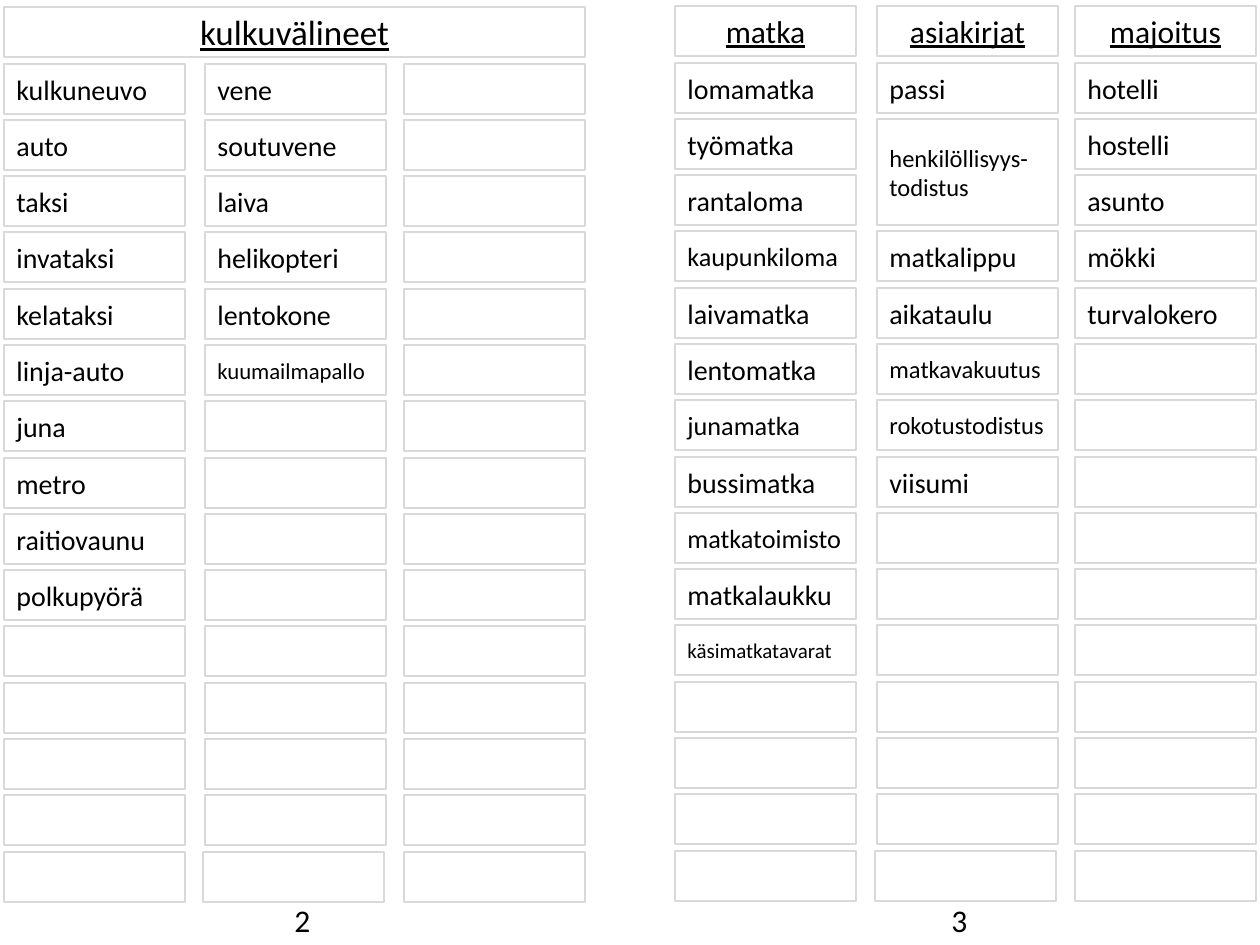
from pptx import Presentation
from pptx.dml.color import RGBColor
from pptx.enum.shapes import MSO_SHAPE
from pptx.enum.text import MSO_ANCHOR, MSO_AUTO_SIZE, PP_ALIGN
from pptx.util import Emu, Pt

RECTANGLE = MSO_SHAPE.RECTANGLE
MIDDLE = MSO_ANCHOR.MIDDLE
LEFT, CENTER = PP_ALIGN.LEFT, PP_ALIGN.CENTER
NO_AUTOFIT, GROW = MSO_AUTO_SIZE.NONE, MSO_AUTO_SIZE.SHAPE_TO_FIT_TEXT

PX = 914400 // 126
COLORS = {"border": "D9D9D9", "text": "000000"}
CELL_WIDTH, CELL_HEIGHT = 181, 50
ROWS, LAST_ROW_OFFSET = 15, 788
TITLE_TEXT = "kulkuvälineet"
TALL_WORD = "henkilöllisyys-todistus"

# Each column: left, top of first row, heading, words (None = covered by the cell above)
COLUMNS = [
    (4, 64, None, ["kulkuneuvo", "auto", "taksi", "invataksi", "kelataksi",
                   "linja-auto", "juna", "metro", "raitiovaunu", "polkupyörä"]),
    (205, 64, None, ["vene", "soutuvene", "laiva", "helikopteri", "lentokone",
                     "kuumailmapallo"]),
    (404, 64, None, []),
    (675, 63, "matka", ["lomamatka", "työmatka", "rantaloma", "kaupunkiloma",
                        "laivamatka", "lentomatka", "junamatka", "bussimatka",
                        "matkatoimisto", "matkalaukku", "käsimatkatavarat"]),
    (877, 63, "asiakirjat", ["passi", TALL_WORD, None, "matkalippu", "aikataulu",
                             "matkavakuutus", "rokotustodistus", "viisumi"]),
    (1075, 63, "majoitus", ["hotelli", "hostelli", "asunto", "mökki", "turvalokero"]),
]
SMALLER_SIZES = {
    "kuumailmapallo": 13, "kaupunkiloma": 15, "junamatka": 15, "matkatoimisto": 15,
    "käsimatkatavarat": 12, TALL_WORD: 14, "matkavakuutus": 14, "rokotustodistus": 14,
}


def write_text(shape, text, size, alignment=LEFT, underline=False):
    shape.text_frame.word_wrap = True
    paragraph = shape.text_frame.paragraphs[0]
    paragraph.text = text
    paragraph.alignment = alignment
    paragraph.font.name = "Calibri"
    paragraph.font.size = Pt(size)
    paragraph.font.underline = underline
    paragraph.font.color.rgb = RGBColor.from_string(COLORS["text"])


def style_cell(shape):
    shape.fill.background()
    shape.line.color.rgb = RGBColor.from_string(COLORS["border"])
    shape.line.width = Pt(1)
    shape.shadow.inherit = False
    shape.text_frame.vertical_anchor = MIDDLE


presentation = Presentation()
presentation.slide_width, presentation.slide_height = Emu(9144000), Emu(6858000)
slide = presentation.slides.add_slide(presentation.slide_layouts[5])

# Page numbers
for number, left, width in [("3", 939, 54), ("2", 282, 43)]:
    page_number = slide.shapes.add_textbox(left * PX, 895 * PX, width * PX, 50 * PX)
    write_text(page_number, number, 18)
    page_number.text_frame.auto_size = GROW

# Heading of the left page
title = slide.shapes.title
title.left, title.top = 4 * PX, 7 * PX
title.width, title.height = 581 * PX, CELL_HEIGHT * PX
style_cell(title)
write_text(title, TITLE_TEXT, 20, CENTER, True)
title.text_frame.auto_size = NO_AUTOFIT

# Word columns
for left, first_top, heading, words in COLUMNS:
    if heading:
        cell = slide.shapes.add_shape(
            RECTANGLE, left * PX, 6 * PX, CELL_WIDTH * PX, CELL_HEIGHT * PX)
        style_cell(cell)
        write_text(cell, heading, 18, CENTER, True)

    for row in range(ROWS):
        word = words[row] if row < len(words) else ""
        if word is None:
            continue
        # The last cell of each middle column sits slightly to the left
        shift = 2 if row == ROWS - 1 and left in (205, 877) else 0
        top = first_top + row * LAST_ROW_OFFSET // (ROWS - 1)
        height = 106 if word == TALL_WORD else CELL_HEIGHT
        cell = slide.shapes.add_shape(
            RECTANGLE, (left - shift) * PX, top * PX, CELL_WIDTH * PX, height * PX)
        style_cell(cell)
        if word:
            write_text(cell, word, SMALLER_SIZES.get(word, 16))

presentation.save("out.pptx")
